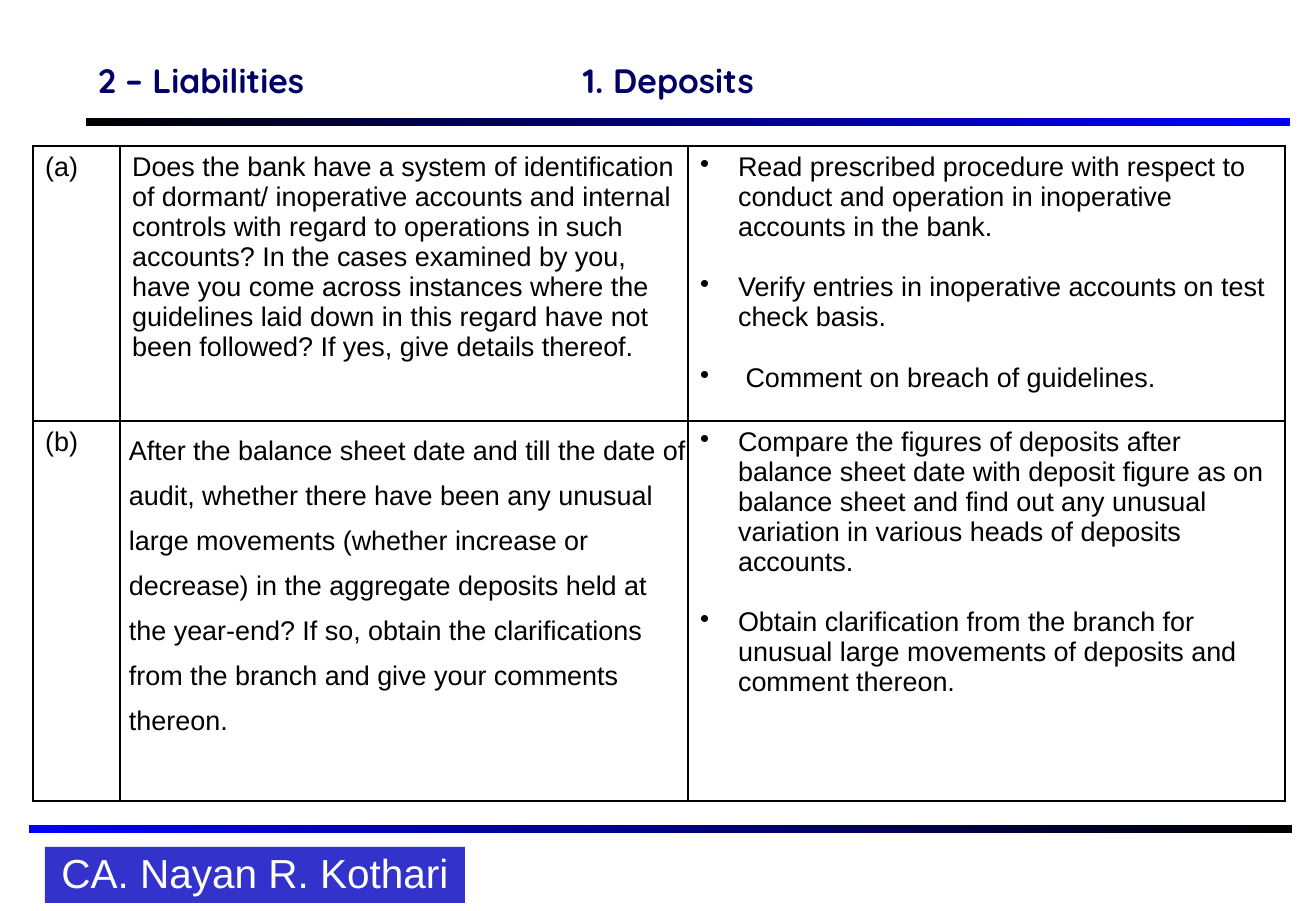
"""Build the audit slide on deposits, with its question table and footer."""
from pptx import Presentation
from pptx.dml.color import RGBColor
from pptx.enum.shapes import MSO_SHAPE
from pptx.enum.text import MSO_ANCHOR, PP_ALIGN
from pptx.oxml import parse_xml
from pptx.oxml.ns import nsdecls
from pptx.util import Pt

PX = 7526
BLACK = RGBColor(0x00, 0x00, 0x00)
BLUE = RGBColor(0x00, 0x00, 0xFF)
NAVY = RGBColor(0x00, 0x00, 0x66)
INDIGO = RGBColor(0x33, 0x33, 0xCC)
WHITE = RGBColor(0xFF, 0xFF, 0xFF)


def add_text(frame, text, size=16, color=BLACK, font="Arial", bold=False,
             align=PP_ALIGN.LEFT, spacing=1.0, before=0, bullet=False, tab=None):
    para = frame.paragraphs[0]
    if para.runs:
        para = frame.add_paragraph()
        para.space_before = Pt(before)
    para.alignment = align
    para.line_spacing = spacing
    properties = para._p.get_or_add_pPr()
    if bullet:
        properties.set("marL", str(38 * PX))
        properties.set("indent", str(-38 * PX))
        properties.append(parse_xml(f'<a:buChar {nsdecls("a")} char="•"/>'))
    if tab:
        properties.append(parse_xml(
            f'<a:tabLst {nsdecls("a")}><a:tab pos="{tab * PX}" algn="l"/></a:tabLst>'))
    span = para.add_run()
    span.text = text
    span.font.size = Pt(size)
    span.font.name = font
    span.font.bold = bold
    span.font.color.rgb = color


deck = Presentation()
deck.slide_width = 1316 * PX
deck.slide_height = 911 * PX
page = deck.slides.add_slide(deck.slide_layouts[6])

bars = [(86, 118, 1204, BLACK, BLUE), (29, 825, 1263, BLUE, BLACK)]
for left, top, width, start, end in bars:
    bar = page.shapes.add_shape(
        MSO_SHAPE.RECTANGLE, left * PX, top * PX, width * PX, 8 * PX)
    bar.shadow.inherit = False
    bar.line.fill.background()
    bar.fill.gradient()
    bar.fill.gradient_angle = 0
    for stop, color in zip(bar.fill.gradient_stops, (start, end)):
        stop.color.rgb = color

title = page.shapes.add_textbox(86 * PX, 50 * PX, 1204 * PX, 60 * PX)
title.text_frame.word_wrap = True
title.text_frame.vertical_anchor = MSO_ANCHOR.MIDDLE
add_text(title.text_frame, "2 – Liabilities\t1. Deposits", size=20, color=NAVY,
         font="Quicksand", bold=True, tab=485)

author = page.shapes.add_shape(
    MSO_SHAPE.RECTANGLE, 45 * PX, 847 * PX, 420 * PX, 56 * PX)
author.shadow.inherit = False
author.line.fill.background()
author.fill.solid()
author.fill.fore_color.rgb = INDIGO
author.text_frame.word_wrap = False
author.text_frame.vertical_anchor = MSO_ANCHOR.MIDDLE
add_text(author.text_frame, "CA. Nayan R. Kothari", size=24, color=WHITE,
         align=PP_ALIGN.CENTER, spacing=0.9)

questions = [
    ("(a)",
     "Does the bank have a system of identification of dormant/ inoperative accounts "
     "and internal controls with regard to operations in such accounts? In the cases "
     "examined by you, have you come across instances where the guidelines laid down "
     "in this regard have not been followed? If yes, give details thereof.",
     ["Read prescribed procedure with respect to conduct and operation in inoperative "
      "accounts in the bank.",
      "Verify entries in inoperative accounts on test check basis.",
      " Comment on breach of guidelines."]),
    ("(b)",
     "After the balance sheet date and till the date of audit, whether there have been "
     "any unusual  large movements (whether increase or decrease) in the aggregate "
     "deposits held at the year-end? If so, obtain the clarifications from the branch "
     "and give your comments thereon.",
     ["Compare the figures of deposits after balance sheet date with deposit figure as "
      "on balance sheet and find out any unusual variation in various heads of "
      "deposits accounts.",
      "Obtain clarification from the branch for unusual large movements of deposits "
      "and comment thereon."]),
]
column_widths = [87, 568, 597]
row_heights = [275, 380]
table = page.shapes.add_table(
    len(row_heights), len(column_widths), 33 * PX, 146 * PX,
    sum(column_widths) * PX, sum(row_heights) * PX).table
table.first_row = False
table.horz_banding = False
for column, width in zip(table.columns, column_widths):
    column.width = width * PX
for row, height in zip(table.rows, row_heights):
    row.height = height * PX

for cell in table.iter_cells():
    cell.fill.background()
    properties = cell._tc.get_or_add_tcPr()
    for index, side in enumerate("LRTB"):
        properties.insert(index, parse_xml(
            f'<a:ln{side} {nsdecls("a")} w="{Pt(1)}"><a:solidFill>'
            f'<a:srgbClr val="{BLACK}"/></a:solidFill></a:ln{side}>'))

for row, (label, question, checks) in zip(table.rows, questions):
    label_cell, question_cell, checks_cell = row.cells
    add_text(label_cell.text_frame, label)
    add_text(question_cell.text_frame, question, spacing=1.5 if label == "(b)" else 1.0)
    for check in checks:
        add_text(checks_cell.text_frame, check, before=18, bullet=True)

wide_cell = table.cell(1, 1)
wide_cell.margin_left = 9 * PX
wide_cell.margin_right = wide_cell.margin_top = wide_cell.margin_bottom = 0

deck.save("out.pptx")
